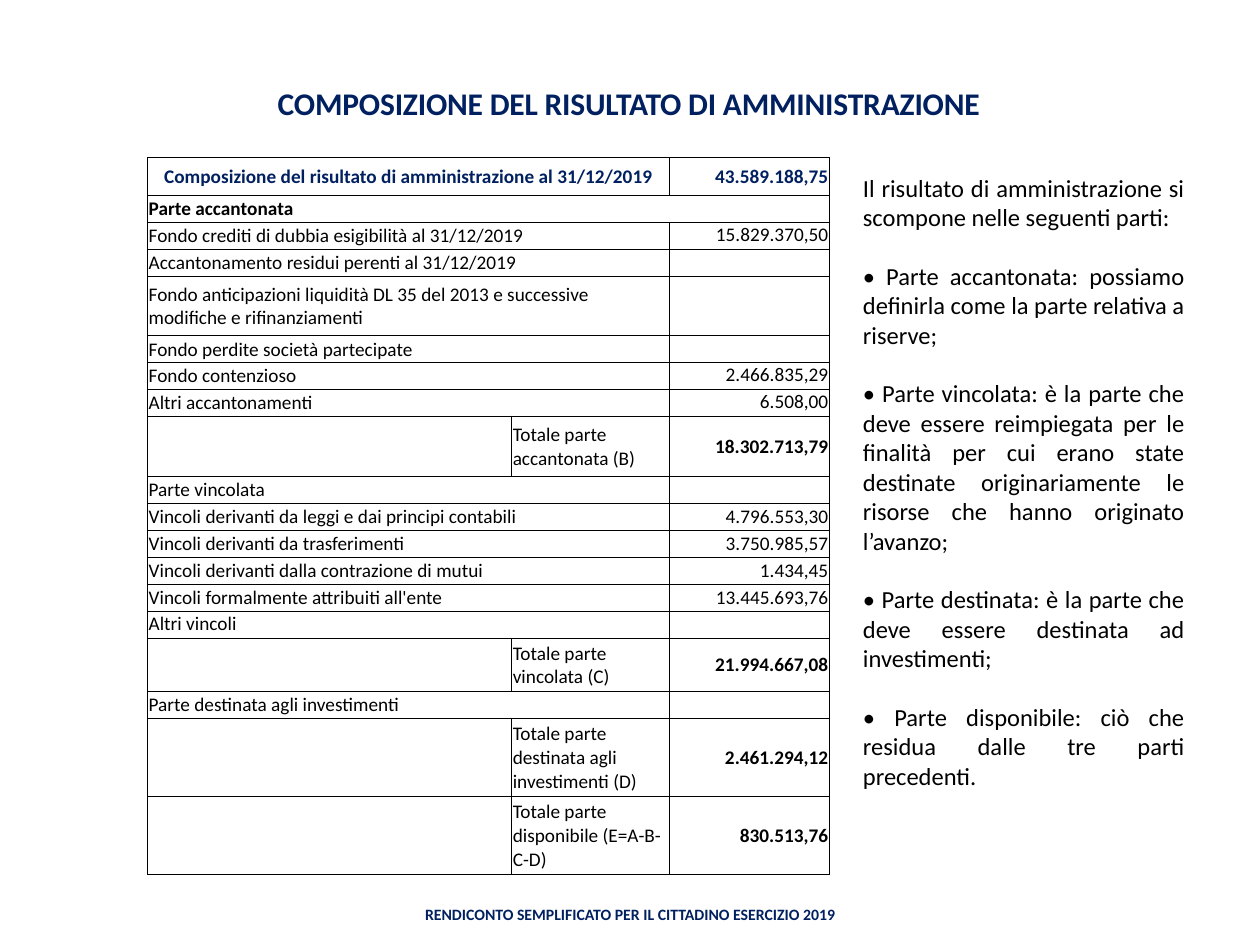
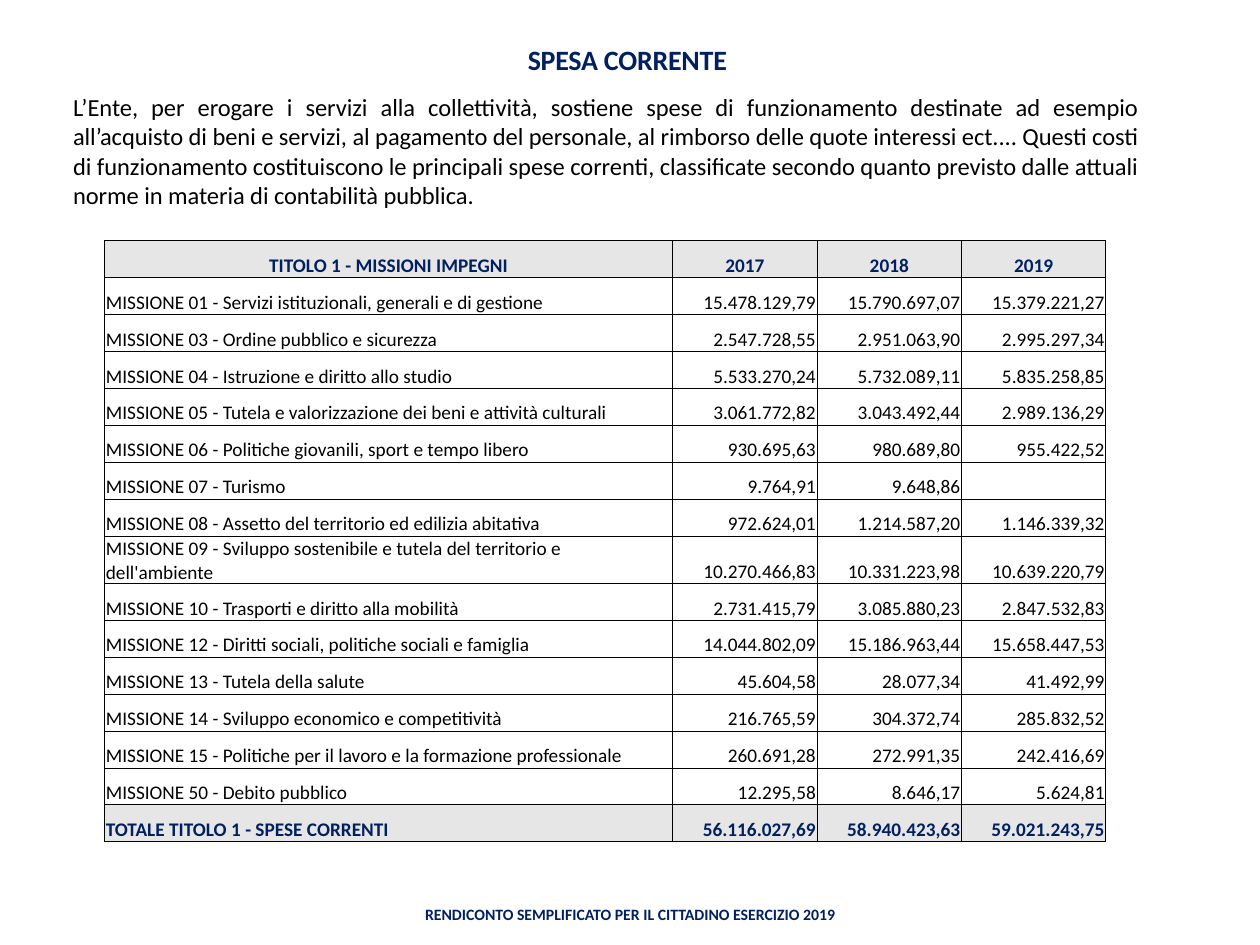
from dataclasses import dataclass

from lxml import etree
from pptx import Presentation
from pptx.dml.color import RGBColor
from pptx.enum.text import MSO_ANCHOR, MSO_AUTO_SIZE, PP_ALIGN
from pptx.oxml.ns import qn
from pptx.util import Inches, Pt

LEFT, MID, RIGHT, FULL = PP_ALIGN.LEFT, PP_ALIGN.CENTER, PP_ALIGN.RIGHT, PP_ALIGN.JUSTIFY
TOP, HALF, LOW = MSO_ANCHOR.TOP, MSO_ANCHOR.MIDDLE, MSO_ANCHOR.BOTTOM
GROW = MSO_AUTO_SIZE.SHAPE_TO_FIT_TEXT


@dataclass(frozen=True)
class Theme:
    font: str = "Calibri"
    navy: str = "002060"
    black: str = "000000"
    grey: str = "E7E6E6"
    title: int = 18
    head: int = 16
    body: int = 14
    cell: int = 11
    foot: int = 9
    rule: float = 0.5


class Deck:
    """Places elements on a grid of 100 columns by 75 rows."""

    def __init__(self, theme):
        self.theme = theme
        self.prs = Presentation()
        self.prs.slide_width, self.prs.slide_height = Inches(10), Inches(7.5)
        self.col = self.prs.slide_width / 100
        self.row = self.prs.slide_height / 75
        self.slide = None

    def grid(self, x, y, w, h):
        return [round(n * unit) for n, unit in
                zip((x, y, w, h), (self.col, self.row) * 2)]

    def page(self):
        self.slide = self.prs.slides.add_slide(self.prs.slide_layouts[6])
        self.foot()

    def style(self, par, size, color, bold, align, track=0):
        par.alignment = align
        for run in par.runs:
            font = run.font
            font.name, font.size, font.bold = self.theme.font, Pt(size), bold
            font.color.rgb = RGBColor.from_string(color)
            if track:
                font._element.set("spc", str(track))

    def text(self, at, lines, size, color, bold=False, align=MID, track=0,
             inset=(0, 0.01), gap=0, lead=0, anchor=TOP, grow=True):
        frame = self.slide.shapes.add_textbox(*self.grid(*at)).text_frame
        frame.word_wrap = True
        frame.vertical_anchor = anchor
        side, edge = inset
        frame.margin_left = frame.margin_right = Inches(side)
        frame.margin_top = frame.margin_bottom = Inches(edge)
        if grow:
            frame.auto_size = GROW
        frame.text = "\n".join(lines)
        for i, par in enumerate(frame.paragraphs):
            par.space_before = Pt(gap if i else lead)
            self.style(par, size, color, bold, align, track)

    def title(self, at, text, size, inset=(0, 0.01)):
        self.text(at, [text], size, self.theme.navy, True, track=-10,
                  inset=inset, lead=0.9)

    def foot(self):
        self.text((30.2, 70.6, 39.6, 4),
                  ["RENDICONTO SEMPLIFICATO PER IL CITTADINO ESERCIZIO 2019"],
                  self.theme.foot, self.theme.navy, True,
                  inset=(0, 0), anchor=HALF, grow=False)

    def table(self, x, y, cols, rows):
        at = self.grid(x, y, sum(cols), sum(rows))
        table = self.slide.shapes.add_table(len(rows), len(cols), *at).table
        table.first_row = table.horz_banding = False
        for part, width in zip(table.columns, cols):
            part.width = round(width * self.col)
        for part, height in zip(table.rows, rows):
            part.height = round(height * self.row)
        for cell in table.iter_cells():
            self.cell(cell)
        return table

    def cell(self, cell, text="", color=None, bold=False, align=LEFT,
             anchor=HALF, fill=None):
        theme = self.theme
        cell.margin_left = cell.margin_right = cell.margin_top = Inches(0.01)
        cell.margin_bottom = 0
        cell.vertical_anchor = anchor
        cell.text_frame.text = text
        par = cell.text_frame.paragraphs[0]
        self.style(par, theme.cell, color or theme.black, bold, align)
        if not text:  # keeps an empty row from growing
            for old in par._p.findall(qn("a:endParaRPr")):
                par._p.remove(old)
            etree.SubElement(par._p, qn("a:endParaRPr"), sz=str(theme.cell * 100))
        self.frame(cell)
        if fill:
            cell.fill.solid()
            cell.fill.fore_color.rgb = RGBColor.from_string(fill)
        else:
            cell.fill.background()

    def frame(self, cell):
        props = cell._tc.get_or_add_tcPr()
        for i, side in enumerate(("lnL", "lnR", "lnT", "lnB")):
            for old in props.findall(qn("a:" + side)):
                props.remove(old)
            line = etree.Element(qn("a:" + side), w=str(Pt(self.theme.rule)))
            paint = etree.SubElement(line, qn("a:solidFill"))
            etree.SubElement(paint, qn("a:srgbClr"), val=self.theme.black)
            props.insert(i, line)


# Row kinds of the result table
HEAD, PART, FUND, BOND, TOTAL = range(5)
LINE = 2.14
RESULT = [
    (HEAD, "Composizione del risultato di amministrazione al 31/12/2019", "43.589.188,75", 3),
    (PART, "Parte accantonata", "", LINE),
    (FUND, "Fondo crediti di dubbia esigibilità al 31/12/2019", "15.829.370,50", LINE),
    (FUND, "Accantonamento residui perenti al 31/12/2019", "", LINE),
    (FUND, "Fondo anticipazioni liquidità DL 35 del 2013 e successive modifiche e rifinanziamenti",
     "", 4.7),
    (FUND, "Fondo perdite società partecipate", "", LINE),
    (FUND, "Fondo contenzioso", "2.466.835,29", LINE),
    (FUND, "Altri accantonamenti", "6.508,00", LINE),
    (TOTAL, "Totale parte accantonata (B)", "18.302.713,79", 4.8),
    (BOND, "Parte vincolata", "", LINE),
    (BOND, "Vincoli derivanti da leggi e dai principi contabili", "4.796.553,30", LINE),
    (BOND, "Vincoli derivanti da trasferimenti", "3.750.985,57", LINE),
    (BOND, "Vincoli derivanti dalla contrazione di mutui", "1.434,45", LINE),
    (BOND, "Vincoli formalmente attribuiti all'ente", "13.445.693,76", LINE),
    (BOND, "Altri vincoli", "", LINE),
    (TOTAL, "Totale parte vincolata (C)", "21.994.667,08", 4.2),
    (FUND, "Parte destinata agli investimenti", "", LINE),
    (TOTAL, "Totale parte destinata agli investimenti (D)", "2.461.294,12", 6.2),
    (TOTAL, "Totale parte disponibile (E=A-B-C-D)", "830.513,76", 6.2),
]

NOTES = [
    "Il risultato di amministrazione si scompone nelle seguenti parti:",
    "• Parte accantonata: possiamo definirla come la parte relativa a riserve;",
    "• Parte vincolata: è la parte che deve essere reimpiegata per le finalità per cui "
    "erano state destinate originariamente le risorse che hanno originato l’avanzo;",
    "• Parte destinata: è la parte che deve essere destinata ad investimenti;",
    "• Parte disponibile: ciò che residua dalle tre parti precedenti.",
]

INTRO = (
    "L’Ente, per erogare i servizi alla collettività, sostiene spese di funzionamento "
    "destinate ad esempio all’acquisto di beni e servizi, al pagamento del personale, "
    "al rimborso delle quote interessi ect.... Questi costi di funzionamento costituiscono "
    "le principali spese correnti, classificate secondo quanto previsto dalle attuali norme "
    "in materia di contabilità pubblica."
)

SPEND = [
    ("TITOLO 1 - MISSIONI IMPEGNI", "2017", "2018", "2019"),
    ("MISSIONE 01 - Servizi istituzionali, generali e di gestione",
     "15.478.129,79", "15.790.697,07", "15.379.221,27"),
    ("MISSIONE 03 - Ordine pubblico e sicurezza",
     "2.547.728,55", "2.951.063,90", "2.995.297,34"),
    ("MISSIONE 04 - Istruzione e diritto allo studio",
     "5.533.270,24", "5.732.089,11", "5.835.258,85"),
    ("MISSIONE 05 - Tutela e valorizzazione dei beni e attività culturali",
     "3.061.772,82", "3.043.492,44", "2.989.136,29"),
    ("MISSIONE 06 - Politiche giovanili, sport e tempo libero",
     "930.695,63", "980.689,80", "955.422,52"),
    ("MISSIONE 07 - Turismo", "9.764,91", "9.648,86", ""),
    ("MISSIONE 08 - Assetto del territorio ed edilizia abitativa",
     "972.624,01", "1.214.587,20", "1.146.339,32"),
    ("MISSIONE 09 - Sviluppo sostenibile e tutela del territorio e dell'ambiente",
     "10.270.466,83", "10.331.223,98", "10.639.220,79"),
    ("MISSIONE 10 - Trasporti e diritto alla mobilità",
     "2.731.415,79", "3.085.880,23", "2.847.532,83"),
    ("MISSIONE 12 - Diritti sociali, politiche sociali e famiglia",
     "14.044.802,09", "15.186.963,44", "15.658.447,53"),
    ("MISSIONE 13 - Tutela della salute", "45.604,58", "28.077,34", "41.492,99"),
    ("MISSIONE 14 - Sviluppo economico e competitività",
     "216.765,59", "304.372,74", "285.832,52"),
    ("MISSIONE 15 - Politiche per il lavoro e la formazione professionale",
     "260.691,28", "272.991,35", "242.416,69"),
    ("MISSIONE 50 - Debito pubblico", "12.295,58", "8.646,17", "5.624,81"),
    ("TOTALE TITOLO 1 - SPESE CORRENTI",
     "56.116.027,69", "58.940.423,63", "59.021.243,75"),
]


def result(deck):
    theme = deck.theme
    deck.page()
    deck.title((12, 6.2, 75.8, 4), "COMPOSIZIONE DEL RISULTATO DI AMMINISTRAZIONE",
               theme.title, inset=(0.1, 0.05))
    deck.text((67.5, 13.2, 27.5, 50.5), NOTES, theme.body, theme.black,
              align=FULL, inset=(0.1, 0.05), gap=16.8)

    # Breakdown table: totals sit in the middle column
    table = deck.table(11.7, 12.5, (28.9, 12.55, 12.7), [row[-1] for row in RESULT])
    for i, (kind, label, value, _) in enumerate(RESULT):
        color = theme.navy if kind == HEAD else theme.black
        first = 1 if kind == TOTAL else 0
        if kind != TOTAL:
            last = 2 if kind == PART else 1
            table.cell(i, 0).merge(table.cell(i, last))
        deck.cell(table.cell(i, first), label, color, kind in (HEAD, PART),
                  MID if kind == HEAD else LEFT,
                  TOP if kind in (PART, BOND) else HALF)
        if value:
            strong = kind in (HEAD, TOTAL)
            deck.cell(table.cell(i, 2), value, color, strong, RIGHT,
                      HALF if strong else TOP)


def spend(deck):
    theme = deck.theme
    deck.page()
    deck.title((18.95, 3.3, 61.7, 2.8), "SPESA CORRENTE", theme.head)
    deck.text((5.8, 7.2, 84.5, 9.6), [INTRO], theme.body, theme.black,
              align=FULL, track=-5, lead=1.1)

    # Spending by mission: shaded first and last rows
    table = deck.table(8.3, 19.1, (45.1, 11.46, 11.46, 11.46), [2.93] * len(SPEND))
    for i, row in enumerate(SPEND):
        key = i in (0, len(SPEND) - 1)
        for j, text in enumerate(row):
            align = MID if i == 0 else RIGHT if j else LEFT
            deck.cell(table.cell(i, j), text, theme.navy if key else theme.black,
                      key, align, LOW, theme.grey if key else None)


def main():
    deck = Deck(Theme())
    result(deck)
    spend(deck)
    deck.prs.save("out.pptx")


if __name__ == "__main__":
    main()
